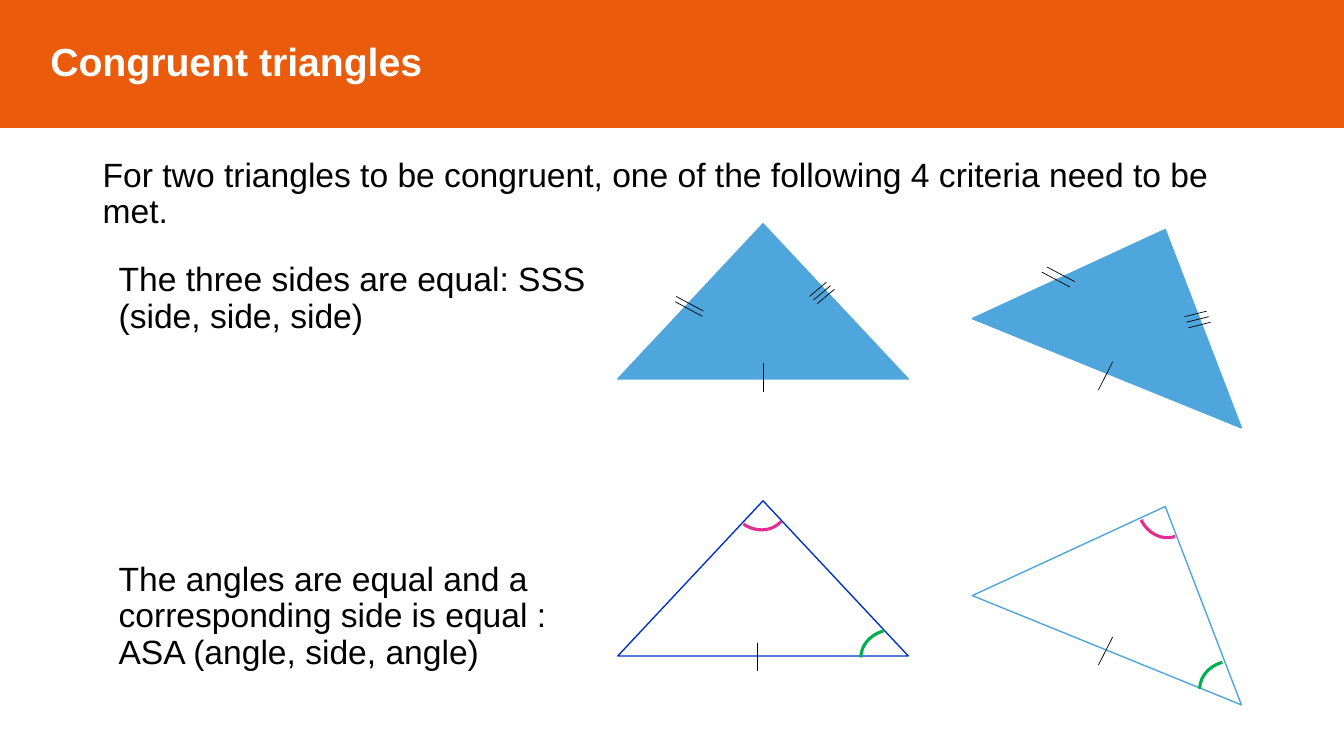
from lxml import etree
from pptx import Presentation
from pptx.dml.color import RGBColor
from pptx.enum.shapes import MSO_CONNECTOR, MSO_SHAPE
from pptx.enum.text import MSO_ANCHOR, PP_ALIGN
from pptx.oxml.ns import qn
from pptx.util import Cm, Pt

RECT, TRIANGLE, ARC = MSO_SHAPE.RECTANGLE, MSO_SHAPE.ISOSCELES_TRIANGLE, MSO_SHAPE.ARC
STRAIGHT = MSO_CONNECTOR.STRAIGHT
LEFT, TOP, MIDDLE = PP_ALIGN.LEFT, MSO_ANCHOR.TOP, MSO_ANCHOR.MIDDLE
ORANGE, BLUE, NAVY, PINK, GREEN = "EA5B0C", "4EA6DC", "0033CC", "E32D91", "00B050"
BLACK, WHITE = "000000", "FFFFFF"


def rgb(value):
    return RGBColor.from_string(value)


def set_formats(target, formats):
    for name, value in formats.items():
        setattr(target, name, value)


class SlideBuilder:
    """Draws the elements of one slide in a shared style."""

    font = {"name": "Arial", "size": Pt(24), "bold": False}
    paragraph = {"alignment": LEFT, "line_spacing": 0.9, "space_before": Pt(10)}
    frame = {"word_wrap": True, "vertical_anchor": TOP}

    def __init__(self, slide):
        self.s = slide

    def fill_text(self, sp, text, color, font=None, paragraph=None, frame=None):
        tf = sp.text_frame
        set_formats(tf, self.frame | (frame or {}))
        p = tf.paragraphs[0]
        set_formats(p, self.paragraph | (paragraph or {}))
        r = p.add_run()
        r.text = text
        set_formats(r.font, self.font | (font or {}))
        r.font.color.rgb = rgb(color)

    def text(self, box, text):
        sp = self.s.shapes.add_textbox(*map(Cm, box))
        self.fill_text(sp, text, BLACK)

    def shape(self, kind, box, line, fill=None, width=1, rotation=0, angles=()):
        sp = self.s.shapes.add_shape(kind, *map(Cm, box))
        sp.shadow.inherit = False
        sp.rotation = rotation
        for i, angle in enumerate(angles):
            sp.adjustments[i] = angle
        if fill:
            sp.fill.solid()
            sp.fill.fore_color.rgb = rgb(fill)
        else:
            sp.fill.background()
        sp.line.color.rgb = rgb(line)
        sp.line.width = Pt(width)
        return sp

    def banner(self, box, text):
        sp = self.shape(RECT, box, ORANGE, ORANGE)
        self.fill_text(sp, text, WHITE, {"size": Pt(28), "bold": True},
                       {"line_spacing": 1.0, "space_before": Pt(0)},
                       {"vertical_anchor": MIDDLE, "margin_left": Cm(1.27)})

    def triangle(self, x, y, rotation, line, fill=None):
        self.shape(TRIANGLE, (x, y, 7.32, 3.91), line, fill, rotation=rotation)

    def angle_mark(self, x, y, rotation, color, start):
        self.shape(ARC, (x, y, 1.35, 1.55), color, width=2.25,
                   rotation=rotation, angles=(start, 211.1))

    def ticks(self, x, y, dx, dy, count=1, step_x=0, step_y=0):
        for i in range(count):
            x1, y1 = x + i * step_x, y + i * step_y
            sp = self.s.shapes.add_connector(
                STRAIGHT, Cm(x1), Cm(y1), Cm(x1 + dx), Cm(y1 + dy))
            sp.line.color.rgb = rgb(BLACK)
            sp.line.width = Pt(0.5)
            etree.SubElement(sp._element.spPr, qn("a:effectLst"))


def main():
    prs = Presentation()
    prs.slide_width, prs.slide_height = Cm(33.87), Cm(19.05)
    b = SlideBuilder(prs.slides.add_slide(prs.slide_layouts[6]))

    b.text((2.34, 3.86, 29.21, 2.24), "For two triangles to be congruent, "
           "one of the following 4 criteria need to be met.")
    b.banner((0, -0.15, 33.87, 3.35), "Congruent triangles")
    b.text((2.74, 6.5, 12.83, 2.24), "The three sides are equal: SSS (side, side, side)")
    b.text((2.74, 14.05, 12.83, 3.99), "The angles are equal and a corresponding "
           "side is equal : ASA (angle, side, angle)")

    for y, left_line, fill in ((5.64, BLUE, BLUE), (12.62, NAVY, None)):
        b.triangle(15.57, y, 0, left_line, fill)
        b.triangle(24.97, y, 22.1, BLUE, fill)

    for mark in (
        (18.42, 11.86, 130.4, PINK, 162),
        (28.68, 12.01, 160.5, PINK, 162),
        (21.79, 15.77, 260.9, GREEN, 166.57),
        (30.33, 16.56, 260.9, GREEN, 166.57),
    ):
        b.angle_mark(*mark)

    for group in (
        (17.04, 7.47, 0.69, 0.37, 2, -0.03, 0.13),
        (26.26, 6.86, 0.7, 0.37, 2, 0.13, -0.13),
        (20.4, 7.47, 0.43, -0.36, 3, 0.1, 0.09),
        (29.85, 7.98, 0.56, -0.14, 3, 0.05, 0.14),
        (19.23, 9.14, 0, 0.74),
        (28.04, 9.12, -0.36, 0.71),
        (19.08, 16.2, 0, 0.71),
        (28.04, 16.05, -0.36, 0.71),
    ):
        b.ticks(*group)

    prs.save("out.pptx")


if __name__ == "__main__":
    main()
